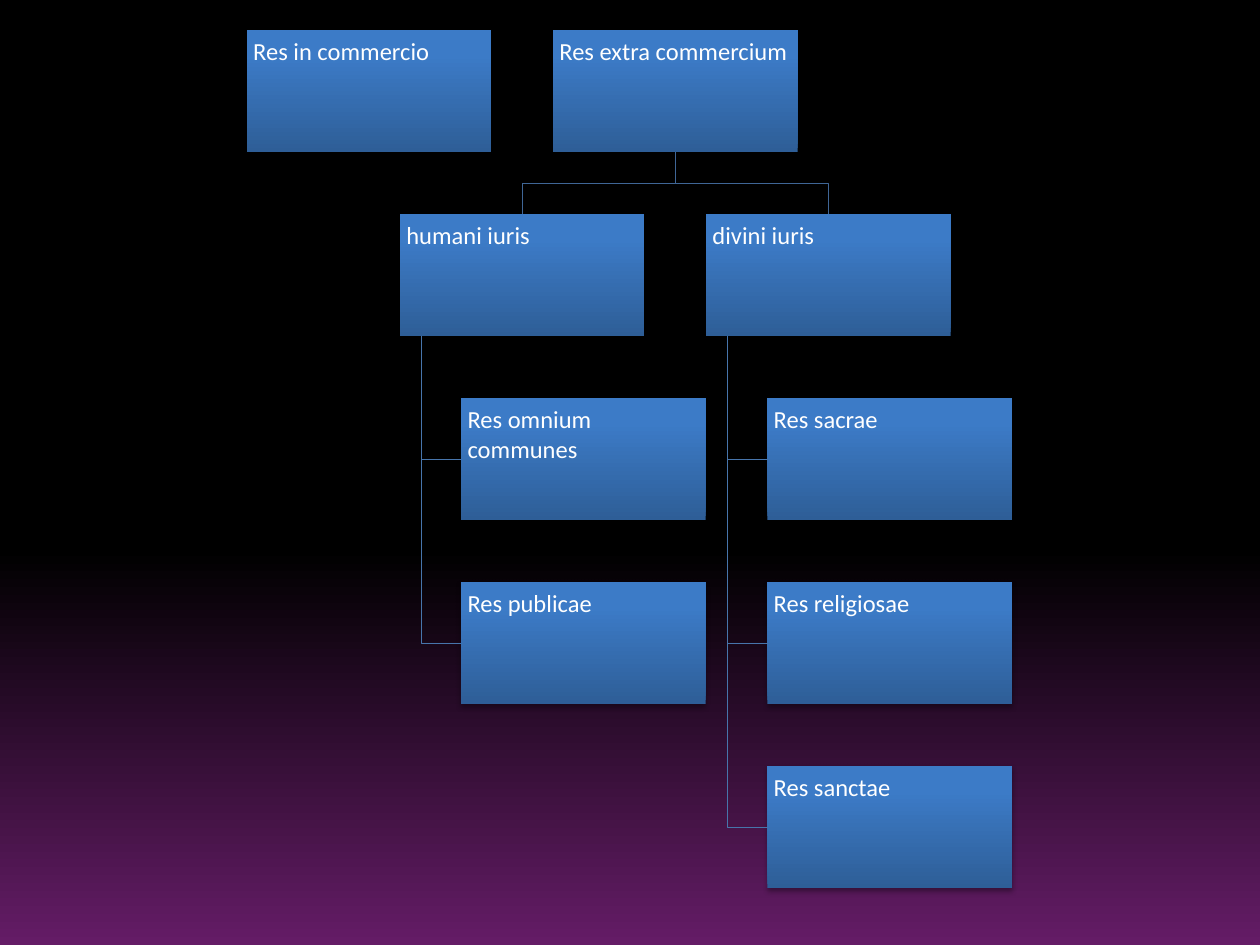
from lxml.etree import SubElement
from pptx import Presentation
from pptx.dml.color import RGBColor as RGB
from pptx.enum.shapes import MSO_SHAPE as SHAPE
from pptx.enum.text import MSO_ANCHOR as ANCHOR, PP_ALIGN as ALIGN
from pptx.oxml.ns import qn
from pptx.util import Inches, Pt

COLORS = {"text": "FFFFFF", "shadow": "000000", "branch": "3F6696", "hang": "4775AB"}
BACKGROUND = [(58, "000000"), (100, "641C66")]
BOX_FILL = [(0, "2E5E97"), (80, "3C7BC7"), (100, "3A7CCA")]

NODES = [
    ("Res in commercio", 0, 0, None, None),
    ("Res extra commercium", 1, 0, None, None),
    ("humani iuris", 0.5, 1, "Res extra commercium", "branch"),
    ("Res omnium communes", 0.7, 2, "humani iuris", "hang"),
    ("Res publicae", 0.7, 3, "humani iuris", "hang"),
    ("divini iuris", 1.5, 1, "Res extra commercium", "branch"),
    ("Res sacrae", 1.7, 2, "divini iuris", "hang"),
    ("Res religiosae", 1.7, 3, "divini iuris", "hang"),
    ("Res sanctae", 1.7, 4, "divini iuris", "hang"),
]

LEFT, TOP = 1.96, 0.24
STEP_X, STEP_Y = 2.43, 1.46
BOX_W, BOX_H = 1.94, 0.97
HANG_INDENT = 0.17
FRAME = {"word_wrap": True, "vertical_anchor": ANCHOR.TOP,
         **{f"margin_{side}": Inches(0.05) for side in ("left", "top", "right", "bottom")}}
FONT = {"name": "Calibri", "size": Pt(14)}


def set_format(target, values):
    for name, value in values.items():
        setattr(target, name, value)


def set_gradient(fill, element, stops, angle):
    fill.gradient()
    fill.gradient_angle = angle
    gs_list = next(element.iter(qn("a:gsLst")))
    for gs in list(gs_list):
        gs_list.remove(gs)
    for position, color in stops:
        gs = SubElement(gs_list, qn("a:gs"), pos=str(position * 1000))
        SubElement(gs, qn("a:srgbClr"), val=color)


def add_shadow(sp):
    sp.shadow.inherit = False
    effects = next(sp.element.iter(qn("a:effectLst")))
    shadow = SubElement(effects, qn("a:outerShdw"), blurRad=str(Pt(3)), dist=str(Pt(1.8)),
                        dir="5400000", rotWithShape="0")
    color = SubElement(shadow, qn("a:srgbClr"), val=COLORS["shadow"])
    SubElement(color, qn("a:alpha"), val="35000")


def add_box(shapes, text, x, y):
    sp = shapes.add_shape(SHAPE.RECTANGLE, *map(Inches, (x, y, BOX_W, BOX_H)))
    set_gradient(sp.fill, sp.element, BOX_FILL, 90)
    sp.line.fill.background()
    add_shadow(sp)
    tf = sp.text_frame
    set_format(tf, FRAME)
    p = tf.paragraphs[0]
    p.alignment = ALIGN.LEFT
    r = p.add_run()
    r.text = text
    set_format(r.font, FONT)
    r.font.color.rgb = RGB.from_string(COLORS["text"])


def link_points(kind, parent, child):
    (px, py), (cx, cy) = parent, child
    bottom = py + BOX_H
    if kind == "branch":
        start, end, middle = px + BOX_W / 2, cx + BOX_W / 2, (bottom + cy) / 2
        return [(start, bottom), (start, middle), (end, middle), (end, cy)]
    stem, middle = px + HANG_INDENT, cy + BOX_H / 2
    return [(stem, bottom), (stem, middle), (cx, middle)]


def add_link(shapes, kind, parent, child):
    points = [(Inches(x), Inches(y)) for x, y in link_points(kind, parent, child)]
    builder = shapes.build_freeform(*points[0])
    builder.add_line_segments(points[1:], close=False)
    sp = builder.convert_to_shape()
    sp.shadow.inherit = False
    sp.fill.background()
    sp.line.color.rgb = RGB.from_string(COLORS[kind])
    sp.line.width = Pt(0.75)


def main():
    prs = Presentation()
    prs.slide_width, prs.slide_height = Inches(10), Inches(7.5)
    s = prs.slides.add_slide(prs.slide_layouts[6])
    set_gradient(s.background.fill, s.element, BACKGROUND, 270)

    places = {text: (LEFT + col * STEP_X, TOP + row * STEP_Y)
              for text, col, row, _, _ in NODES}
    for text, _, _, parent, kind in NODES:
        add_box(s.shapes, text, *places[text])
        if parent:
            add_link(s.shapes, kind, places[parent], places[text])

    prs.save("out.pptx")


if __name__ == "__main__":
    main()
